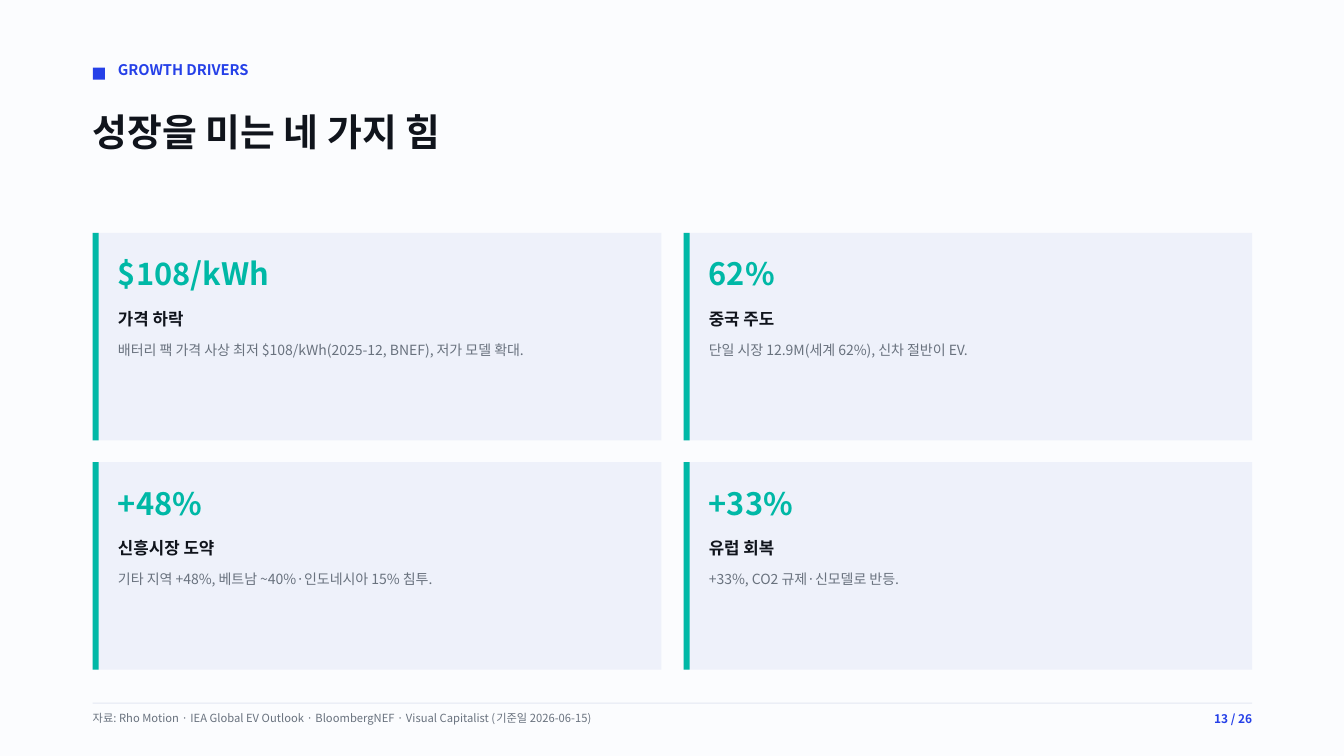
from lxml import etree
from pptx import Presentation
from pptx.dml.color import RGBColor
from pptx.enum.shapes import MSO_SHAPE
from pptx.enum.text import MSO_ANCHOR, MSO_AUTO_SIZE, PP_ALIGN
from pptx.oxml.ns import qn
from pptx.util import Inches, Pt

RECTANGLE = MSO_SHAPE.RECTANGLE
TOP = MSO_ANCHOR.TOP
GROW = MSO_AUTO_SIZE.SHAPE_TO_FIT_TEXT
LEFT = PP_ALIGN.LEFT
RIGHT = PP_ALIGN.RIGHT

FONT = "Noto Sans CJK KR"
BACKGROUND = "FBFCFE"
BLUE = "2540E8"
TEAL = "00B8A6"
INK = "10141C"
GRAY = "69727E"
PANEL = "EEF1FA"
RULE = "E3E8F2"

EYEBROW_STYLE = {"size": Pt(10.5), "bold": True}
TITLE_STYLE = {"size": Pt(27), "bold": True}
VALUE_STYLE = {"size": Pt(22), "bold": True}
HEADING_STYLE = {"size": Pt(12), "bold": True}
DETAIL_STYLE = {"size": Pt(10), "bold": False}
SOURCE_STYLE = {"size": Pt(8), "bold": False}
PAGE_STYLE = {"size": Pt(8.5), "bold": True}

MARGIN = 0.92
CONTENT_WIDTH = 11.5
INDENT = 0.25
CARD_WIDTH = 5.64
CARD_HEIGHT = 2.06
CARD_TOP = 2.31
COLUMN_STEP = 5.86
ROW_STEP = 2.275

DRIVERS = [
    ("$108/kWh", "가격 하락", "배터리 팩 가격 사상 최저 $108/kWh(2025-12, BNEF), 저가 모델 확대."),
    ("62%", "중국 주도", "단일 시장 12.9M(세계 62%), 신차 절반이 EV."),
    ("+48%", "신흥시장 도약", "기타 지역 +48%, 베트남 ~40%·인도네시아 15% 침투."),
    ("+33%", "유럽 회복", "+33%, CO2 규제·신모델로 반등."),
]


def color(value):
    return RGBColor.from_string(value)


def add_block(slide, box, fill):
    shape = slide.shapes.add_shape(RECTANGLE, *map(Inches, box))
    shape.shadow.inherit = False
    shape.fill.solid()
    shape.fill.fore_color.rgb = color(fill)
    shape.line.fill.background()


def write_text(shape, text, style, text_color, align=LEFT, wrap=True):
    frame = shape.text_frame
    frame_format = {
        "margin_left": 0,
        "margin_top": 0,
        "margin_right": 0,
        "margin_bottom": 0,
        "vertical_anchor": TOP,
        "word_wrap": wrap,
        "auto_size": GROW,
    }
    for name, value in frame_format.items():
        setattr(frame, name, value)
    paragraph = frame.paragraphs[0]
    paragraph.alignment = align
    run = paragraph.add_run()
    run.text = text
    for name, value in style.items():
        setattr(run.font, name, value)
    run.font.color.rgb = color(text_color)
    run.font.name = FONT
    east_asian = etree.SubElement(run.font._element, qn("a:ea"))
    east_asian.set("typeface", FONT)


def add_text(slide, box, text, style, text_color, align=LEFT, wrap=True):
    shape = slide.shapes.add_textbox(*map(Inches, box))
    write_text(shape, text, style, text_color, align, wrap)


def add_header(slide, left, top, width):
    add_block(slide, (left, top + 0.07, 0.12, 0.12), BLUE)
    add_text(slide, (left + INDENT, top, 1.33, 0.18), "GROWTH DRIVERS",
             EYEBROW_STYLE, BLUE, wrap=False)
    title = slide.shapes.title
    title_box = {"left": left, "top": top + 0.48, "width": width, "height": 0.45}
    for name, value in title_box.items():
        setattr(title, name, Inches(value))
    write_text(title, "성장을 미는 네 가지 힘", TITLE_STYLE, INK)


def add_card(slide, left, top, width, height, driver):
    add_block(slide, (left, top, width, height), PANEL)
    add_block(slide, (left, top, 0.06, height), TEAL)
    lines = [
        (0.22, 0.37, VALUE_STYLE, TEAL),
        (0.75, 0.2, HEADING_STYLE, INK),
        (1.08, 0.17, DETAIL_STYLE, GRAY),
    ]
    for text, (offset, line_height, style, text_color) in zip(driver, lines):
        box = (left + INDENT, top + offset, width - 0.45, line_height)
        add_text(slide, box, text, style, text_color)


def add_cards(slide, left, top):
    for index, driver in enumerate(DRIVERS):
        row, column = divmod(index, 2)
        add_card(slide, left + column * COLUMN_STEP, top + row * ROW_STEP,
                 CARD_WIDTH, CARD_HEIGHT, driver)


def add_footer(slide, left, top, width):
    page_width = 0.83
    add_block(slide, (left, top, width, 0.01), RULE)
    add_text(slide, (left, top + 0.09, width - page_width, 0.13),
             "자료: Rho Motion · IEA Global EV Outlook · BloombergNEF · "
             "Visual Capitalist (기준일 2026-06-15)", SOURCE_STYLE, GRAY)
    add_text(slide, (left + width - page_width, top + 0.09, page_width, 0.14),
             "13 / 26", PAGE_STYLE, BLUE, RIGHT)


def main():
    presentation = Presentation()
    presentation.slide_width = Inches(13.33)
    presentation.slide_height = Inches(7.5)
    slide = presentation.slides.add_slide(presentation.slide_layouts[5])
    slide.background.fill.solid()
    slide.background.fill.fore_color.rgb = color(BACKGROUND)
    add_header(slide, MARGIN, 0.6, CONTENT_WIDTH)
    add_cards(slide, MARGIN, CARD_TOP)
    add_footer(slide, MARGIN, 6.97, CONTENT_WIDTH)
    presentation.save("out.pptx")


if __name__ == "__main__":
    main()
